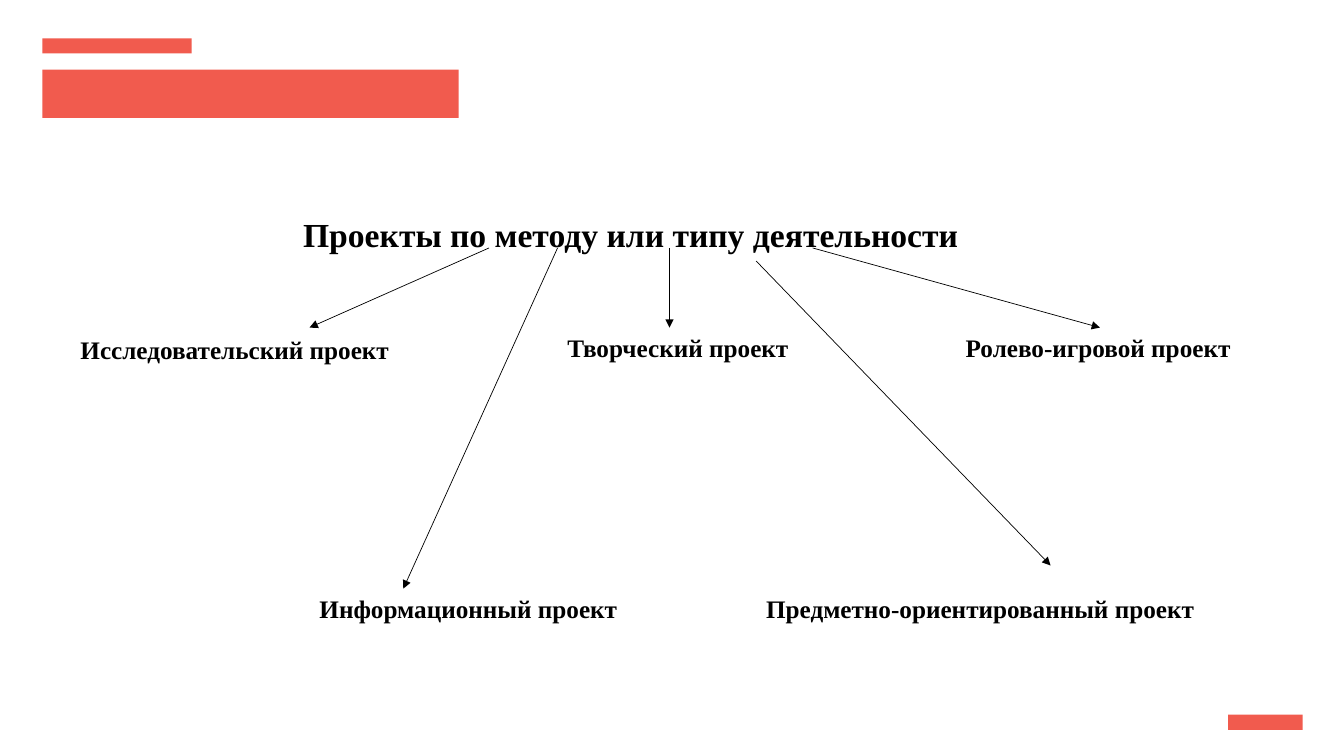
from pptx import Presentation
from pptx.dml.color import RGBColor
from pptx.enum.shapes import MSO_CONNECTOR as CONN, MSO_SHAPE as SHAPE
from pptx.enum.text import PP_ALIGN as ALIGN
from pptx.oxml.ns import qn
from pptx.util import Inches, Pt
from lxml.etree import SubElement

BLACK, CORAL = "000000", "F15B4E"
SERIF = "Times New Roman"

TITLE = ("Проекты по методу или типу деятельности", (2.87, 2.04, 6.77, 0.51))
PROJECTS = [
    ("Исследовательский проект", (0.7, 3.25, 3.3, 0.41), ALIGN.JUSTIFY, 1.07),
    ("Творческий проект", (5.53, 3.25, 2.42, 0.4), ALIGN.LEFT, 1.0),
    ("Ролево-игровой проект", (9.48, 3.25, 2.86, 0.4), ALIGN.LEFT, 1.0),
    ("Информационный проект", (3.07, 5.84, 3.19, 0.4), ALIGN.LEFT, 1.0),
    ("Предметно-ориентированный проект", (7.5, 5.82, 4.49, 0.43), ALIGN.JUSTIFY, 1.07),
]
ARROWS = [
    (4.85, 2.46, 3.07, 3.25),
    (6.64, 2.46, 6.64, 3.25),
    (8.06, 2.46, 10.91, 3.25),
    (5.53, 2.46, 4, 5.84),
    (7.5, 2.59, 10.42, 5.61),
]
BARS = [
    (0.42, 0.38, 1.48, 0.15),
    (0.42, 0.69, 4.13, 0.48),
    (12.18, 7.09, 0.74, 0.15),
]


def rgb(color):
    return RGBColor.from_string(color)


def add_text(s, text, box, size, align, spacing):
    tf = s.shapes.add_textbox(*map(Inches, box)).text_frame
    tf.word_wrap = False
    p = tf.paragraphs[0]
    p.alignment = align
    p.line_spacing = spacing
    r = p.add_run()
    r.text = text
    r.font.name = SERIF
    r.font.size = Pt(size)
    r.font.bold = True
    r.font.color.rgb = rgb(BLACK)


def add_arrow(s, ends):
    cn = s.shapes.add_connector(CONN.STRAIGHT, *map(Inches, ends))
    cn.line.color.rgb = rgb(BLACK)
    cn.line.width = Pt(0.5)
    SubElement(cn.line._get_or_add_ln(), qn("a:tailEnd"), type="triangle")
    SubElement(cn._element.spPr, qn("a:effectLst"))


def add_bar(s, box):
    sp = s.shapes.add_shape(SHAPE.RECTANGLE, *map(Inches, box))
    sp.shadow.inherit = False
    sp.fill.solid()
    sp.fill.fore_color.rgb = rgb(CORAL)
    sp.line.fill.background()


def main():
    prs = Presentation()
    prs.slide_width, prs.slide_height = Inches(13.33), Inches(7.5)
    s = prs.slides.add_slide(prs.slide_layouts[6])
    add_text(s, *TITLE, 24, ALIGN.CENTER, 1.07)
    for text, box, align, spacing in PROJECTS:
        add_text(s, text, box, 18, align, spacing)
    for ends in ARROWS:
        add_arrow(s, ends)
    for box in BARS:
        add_bar(s, box)
    prs.save("out.pptx")


if __name__ == "__main__":
    main()
